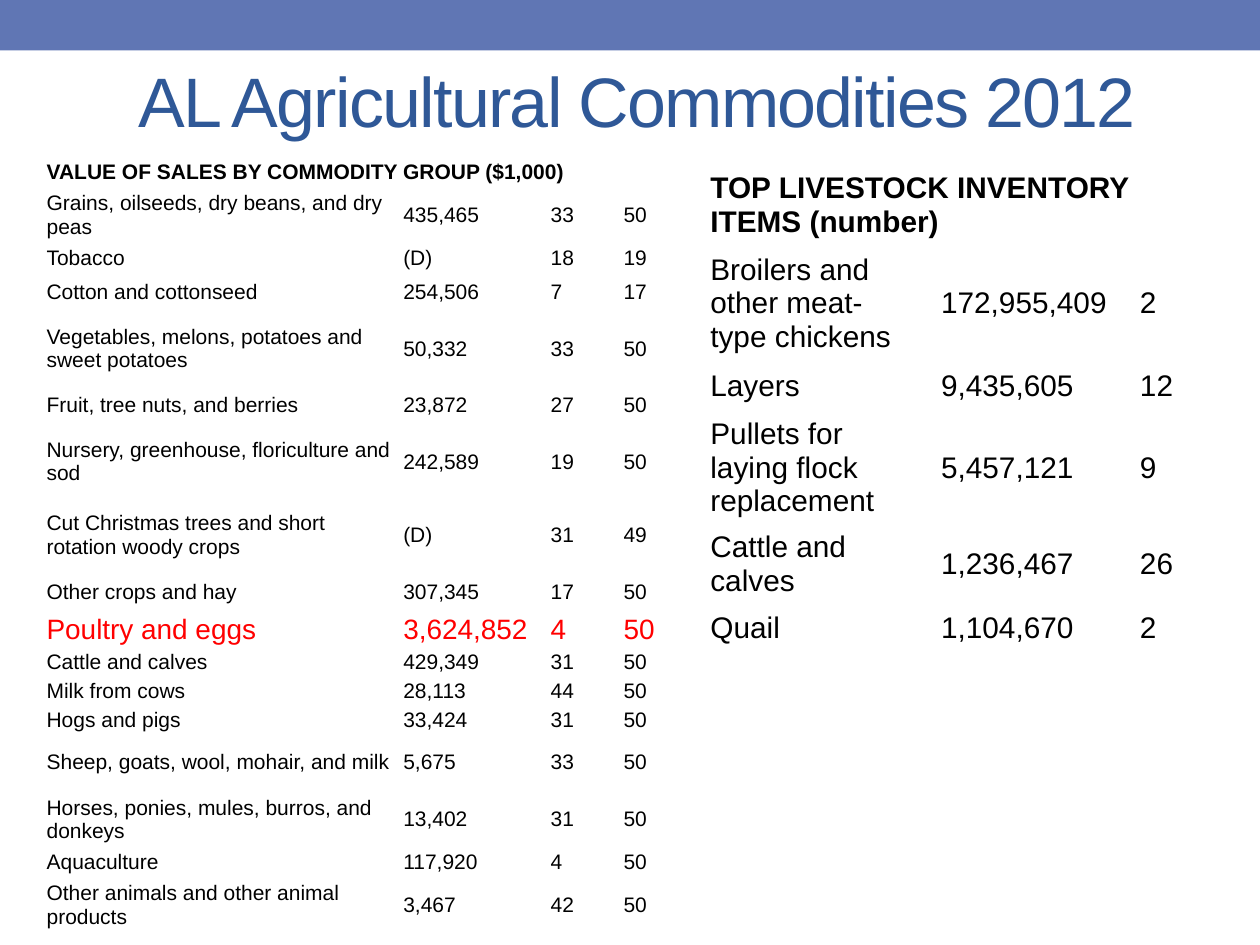
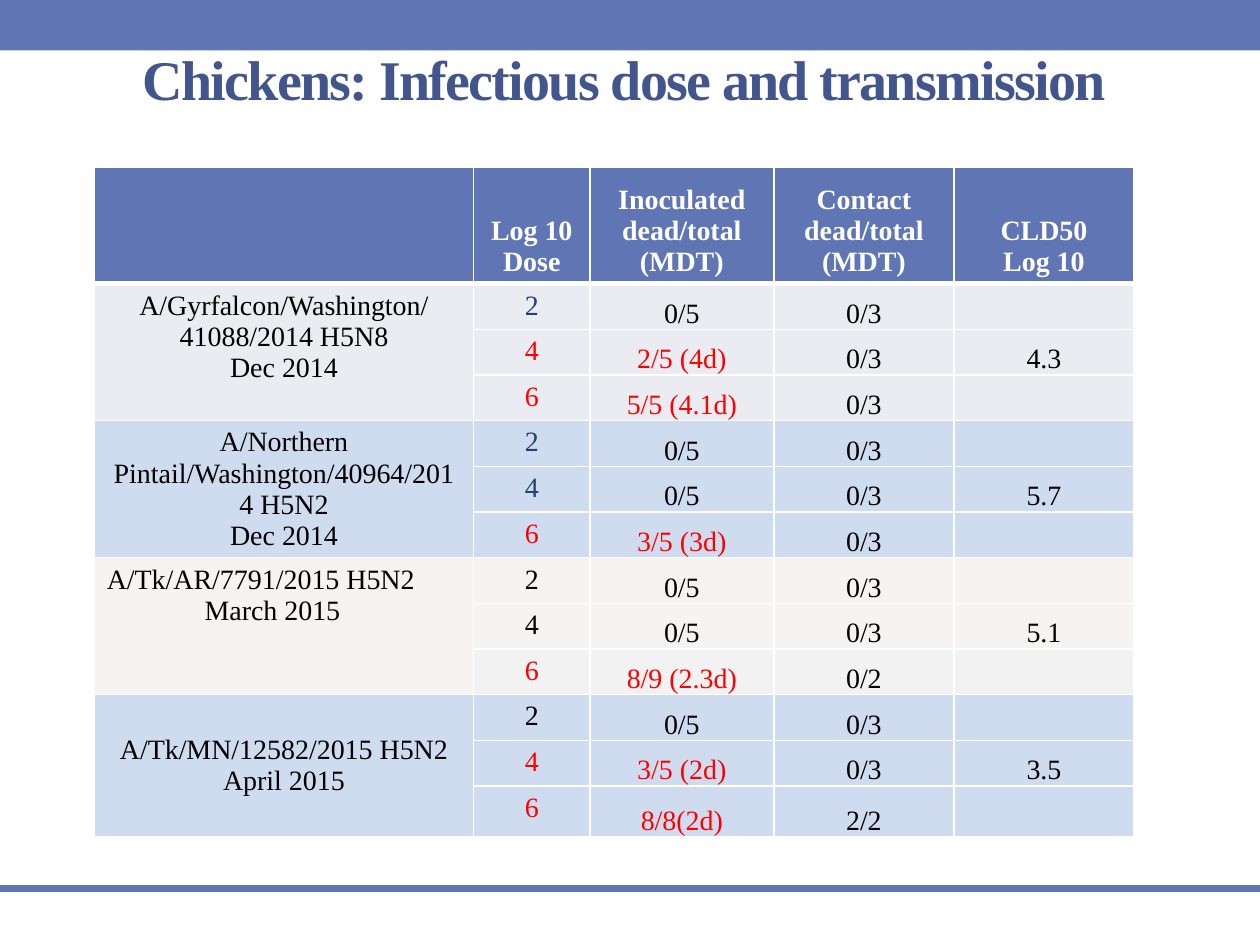
from lxml.etree import SubElement
from pptx import Presentation
from pptx.dml.color import RGBColor
from pptx.enum.shapes import MSO_CONNECTOR, MSO_SHAPE
from pptx.enum.text import MSO_ANCHOR, MSO_AUTO_SIZE, PP_ALIGN
from pptx.oxml.ns import qn
from pptx.util import Cm, Pt

COLORS = {
    "band": "6076B4", "title": "2F5897", "dark_title": "42568D",
    "black": "000000", "white": "FFFFFF", "red": "FF0000", "navy": "234271",
    "gray_blue": "EAECF2", "light_blue": "CFDCF0", "rose": "ECDBDB",
    "light_gray": "F2F2F2",
}
SANS, SERIF = "Arial", "Times New Roman"
NO_STYLE = "{2D5ABB26-0587-4C30-8999-92F81FD0307C}"
SLIDE_WIDTH, SLIDE_HEIGHT = Cm(25.4), Cm(19.05)


def rgb(name):
    return RGBColor.from_string(COLORS[name])


class SlideBuilder:
    """Holds the deck style and the current slide."""

    def __init__(self):
        self.deck = Presentation()
        self.deck.slide_width, self.deck.slide_height = SLIDE_WIDTH, SLIDE_HEIGHT
        self.layout = self.deck.slide_layouts[5]
        self.page = None

    def new_page(self):
        self.page = self.deck.slides.add_slide(self.layout)
        if len(self.deck.slides) == 1:
            self.add_layout_band()

    def add_layout_band(self):
        """Put the top band on the layout that all slides share."""
        band = self.page.shapes.add_shape(
            MSO_SHAPE.RECTANGLE, 0, 0, SLIDE_WIDTH, Cm(1.02))
        band.shadow.inherit = False
        band.fill.solid()
        band.fill.fore_color.rgb = rgb("band")
        band.line.fill.background()
        self.layout.shapes._spTree.insert(2, band._element)

    def style(self, para, font, size, color="black", bold=False, align=PP_ALIGN.LEFT):
        para.alignment = align
        para.font.name, para.font.size, para.font.bold = font, Pt(size), bold
        para.font.color.rgb = rgb(color)

    def title(self, text, left, top, width, **style):
        box = self.page.shapes.title
        box.left, box.top, box.width, box.height = Cm(left), Cm(top), Cm(width), Cm(2.74)
        frame = box.text_frame
        frame.text = text
        frame.word_wrap = True
        frame.auto_size = MSO_AUTO_SIZE.NONE
        frame.vertical_anchor = MSO_ANCHOR.MIDDLE
        para = frame.paragraphs[0]
        self.style(para, **style)
        para.runs[0].font._element.set("spc", "-100")

    def table(self, left, top, widths, heights):
        frame = self.page.shapes.add_table(
            len(heights), len(widths), Cm(left), Cm(top),
            Cm(sum(widths)), Cm(sum(heights)))
        table = frame.table
        table.first_row = table.horz_banding = False
        table._tbl.tblPr.find(qn("a:tableStyleId")).text = NO_STYLE
        for column, width in zip(table.columns, widths):
            column.width = Cm(width)
        for row, height in zip(table.rows, heights):
            row.height = Cm(height)
        return table

    def cell(self, cell, text, size, anchor=MSO_ANCHOR.MIDDLE, insets=None, **style):
        cell.vertical_anchor = anchor
        if insets:
            (cell.margin_left, cell.margin_top,
             cell.margin_right, cell.margin_bottom) = map(Cm, insets)
        cell.text = text
        for para in cell.text_frame.paragraphs:
            self.style(para, size=size, **style)
            if not text:
                para._p.get_or_add_endParaRPr().set("sz", str(size * 100))

    def borders(self, cell, top=1, bottom=1):
        properties = cell._tc.get_or_add_tcPr()
        for side, width in (("L", 1), ("R", 1), ("T", top), ("B", bottom)):
            line = SubElement(properties, qn(f"a:ln{side}"), w=str(Pt(width)))
            fill = SubElement(line, qn("a:solidFill"))
            SubElement(fill, qn("a:srgbClr"), val=COLORS["white"])

    def fill(self, cell, color, opacity=100):
        cell.fill.solid()
        cell.fill.fore_color.rgb = rgb(color)
        if opacity < 100:
            tint = cell._tc.tcPr.find(f"{qn('a:solidFill')}/{qn('a:srgbClr')}")
            SubElement(tint, qn("a:alpha"), val=str(opacity * 1000))

    def footer_line(self, top):
        line = self.page.shapes.add_connector(
            MSO_CONNECTOR.STRAIGHT, 0, Cm(top), SLIDE_WIDTH, Cm(top))
        line.line.color.rgb = rgb("band")
        line.line.width = Pt(4.5)
        SubElement(line._element.spPr, qn("a:effectLst"))


# Slide 1: sales and livestock; each row is its height in cm and its cells
SALES_HEADING = "VALUE OF SALES BY COMMODITY GROUP ($1,000)"
SALES = [
    (1.15, "Grains, oilseeds, dry beans, and dry peas", "435,465", "33", "50"),
    (0.58, "Tobacco", "(D)", "18", "19"),
    (0.8, "Cotton and cottonseed", "254,506", "7", "17"),
    (1.48, "Vegetables, melons, potatoes and sweet potatoes", "50,332", "33", "50"),
    (0.8, "Fruit, tree nuts, and berries", "23,872", "27", "50"),
    (1.48, "Nursery, greenhouse, floriculture and sod", "242,589", "19", "50"),
    (1.48, "Cut Christmas trees and short rotation woody crops", "(D)", "31", "49"),
    (0.8, "Other crops and hay", "307,345", "17", "50"),
    (0.73, "Poultry and eggs", "3,624,852", "4", "50"),
    (0.58, "Cattle and calves", "429,349", "31", "50"),
    (0.58, "Milk from cows", "28,113", "44", "50"),
    (0.58, "Hogs and pigs", "33,424", "31", "50"),
    (1.15, "Sheep, goats, wool, mohair, and milk", "5,675", "33", "50"),
    (1.15, "Horses, ponies, mules, burros, and donkeys", "13,402", "31", "50"),
    (0.58, "Aquaculture", "117,920", "4", "50"),
    (1.15, "Other animals and other animal products", "3,467", "42", "50"),
]
LIVESTOCK_HEADING = "TOP LIVESTOCK INVENTORY ITEMS (number)"
LIVESTOCK = [
    (2.36, "Broilers and other meat-type chickens", "172,955,409", "2", ""),
    (0.99, "Layers", "9,435,605", "12", ""),
    (2.25, "Pullets for laying flock replacement", "5,457,121", "9", ""),
    (1.6, "Cattle and calves", "1,236,467", "26", ""),
    (0.99, "Quail", "1,104,670", "2", ""),
]


def plain_table(builder, left, top, widths, heading, heading_height, rows,
                size, insets, highlight=None):
    heights = [heading_height] + [row[0] for row in rows]
    table = builder.table(left, top, widths, heights)
    for column in range(len(widths)):
        builder.cell(table.cell(0, column), "" if column else heading, size,
                     insets=insets, font=SANS, bold=True)
    table.cell(0, 0).merge(table.cell(0, len(widths) - 1))
    for number, (_, *texts) in enumerate(rows, 1):
        marked = texts[0] == highlight
        for column, text in enumerate(texts):
            builder.cell(table.cell(number, column), text, 16 if marked else size,
                         insets=insets, font=SANS, color="red" if marked else "black")


def commodities_page(builder):
    builder.new_page()
    builder.title("AL Agricultural Commodities 2012", 2.54, 0.64, 22.86,
                  font=SANS, size=40, color="title")
    plain_table(builder, 0.84, 3.18, [7.19, 2.97, 1.47, 5.28], SALES_HEADING, 0.58,
                SALES, 12, (0.1, 0.05, 0.1, 0.05), highlight="Poultry and eggs")
    plain_table(builder, 14.07, 3.33, [4.65, 4.01, 1.47, 0.64], LIVESTOCK_HEADING, 1.6,
                LIVESTOCK, 17, (0.25, 0.13, 0.25, 0.13))


# Slide 2: dose trial, three doses for each virus strain
HEADINGS = ["", "Log 10 Dose", "Inoculated dead/total\n(MDT)",
            "Contact dead/total\n(MDT)", "CLD50\nLog 10"]
DOSES = ["2", "4", "6"]
STRAINS = [
    # name, fill, colour of harmless doses, inoculated, contact, CLD50
    ("A/Gyrfalcon/Washington/41088/2014 H5N8\nDec 2014", "gray_blue", "navy",
     ["0/5", "2/5 (4d)", "5/5 (4.1d)"], ["0/3", "0/3", "0/3"], "4.3"),
    ("A/Northern Pintail/Washington/40964/2014 H5N2\nDec 2014", "light_blue", "navy",
     ["0/5", "0/5", "3/5 (3d)"], ["0/3", "0/3", "0/3"], "5.7"),
    ("A/Tk/AR/7791/2015 H5N2\nMarch 2015", "rose", "black",
     ["0/5", "0/5", "8/9 (2.3d)"], ["0/3", "0/3", "0/2"], "5.1"),
    ("A/Tk/MN/12582/2015 H5N2\nApril 2015", "light_blue", "black",
     ["0/5", "3/5 (2d)", "8/8(2d)"], ["0/3", "0/3", "2/2"], "3.5"),
]
TIGHT = (0.03, 0.03, 0.03, 0)


def strain_rows(builder, table, first, strain):
    name, fill, dose_color, inoculated, contact, lethal_dose = strain
    for step, dose in enumerate(DOSES):
        deadly = not inoculated[step].startswith("0/")
        texts = [name if step == 0 else "", dose, inoculated[step], contact[step],
                 lethal_dose if step == 1 else ""]
        colors = ["black", "red" if deadly else dose_color,
                  "red" if deadly else "black", "black", "black"]
        for column, (text, color) in enumerate(zip(texts, colors)):
            cell = table.cell(first + step, column)
            result = column > 1
            builder.cell(cell, text, 16, MSO_ANCHOR.BOTTOM if result else MSO_ANCHOR.TOP,
                         TIGHT if result else None, font=SERIF, color=color,
                         align=PP_ALIGN.CENTER)
            builder.borders(cell, top=3 if first + step == 1 else 1)
            if fill == "rose" and step == 2:
                builder.fill(cell, "light_gray")
            else:
                builder.fill(cell, fill, 33 if fill == "rose" else 100)
    name_cell = table.cell(first, 0)
    name_cell.merge(table.cell(first + len(DOSES) - 1, 0))
    return name_cell


def dose_page(builder):
    builder.new_page()
    builder.title("Chickens: Infectious dose and transmission", 0.3, 0.2, 24.56,
                  font=SERIF, size=32, color="dark_title", bold=True,
                  align=PP_ALIGN.CENTER)
    heights = [2.34] + [0.92] * 11 + [1.02]
    table = builder.table(1.9, 3.38, [7.65, 2.34, 3.71, 3.63, 3.63], heights)
    for column, heading in enumerate(HEADINGS):
        cell = table.cell(0, column)
        builder.cell(cell, heading, 16, MSO_ANCHOR.BOTTOM, font=SERIF,
                     color="white", bold=True, align=PP_ALIGN.CENTER)
        builder.borders(cell, bottom=3)
        builder.fill(cell, "band")
    names = [strain_rows(builder, table, 1 + number * len(DOSES), strain)
             for number, strain in enumerate(STRAINS)]

    # The third name is set left with its date indented, the last is centred
    for para, indent in zip(names[2].text_frame.paragraphs, (0, 1.97)):
        para.alignment = PP_ALIGN.LEFT
        para._p.get_or_add_pPr().set("marL", str(Cm(indent)))
    names[3].vertical_anchor = MSO_ANCHOR.MIDDLE
    builder.footer_line(17.91)


def main():
    builder = SlideBuilder()
    commodities_page(builder)
    dose_page(builder)
    builder.deck.save("out.pptx")


if __name__ == "__main__":
    main()
